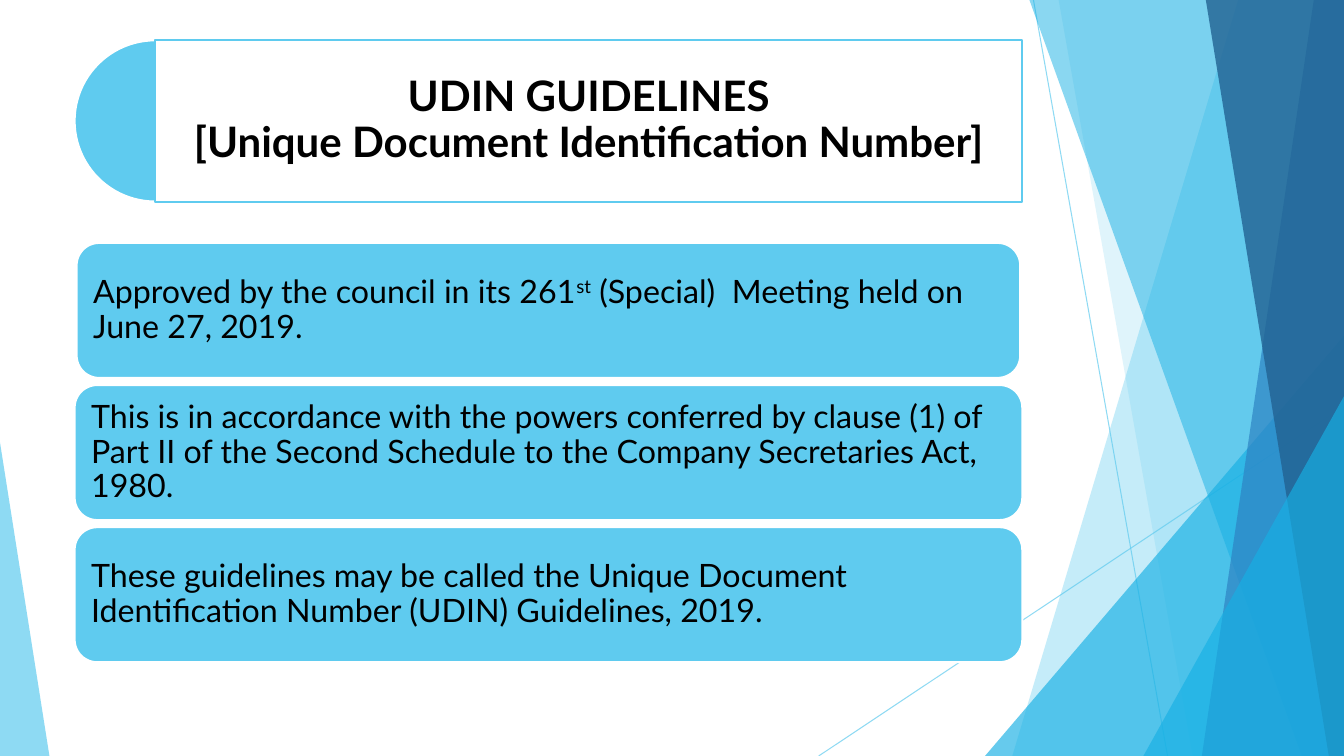
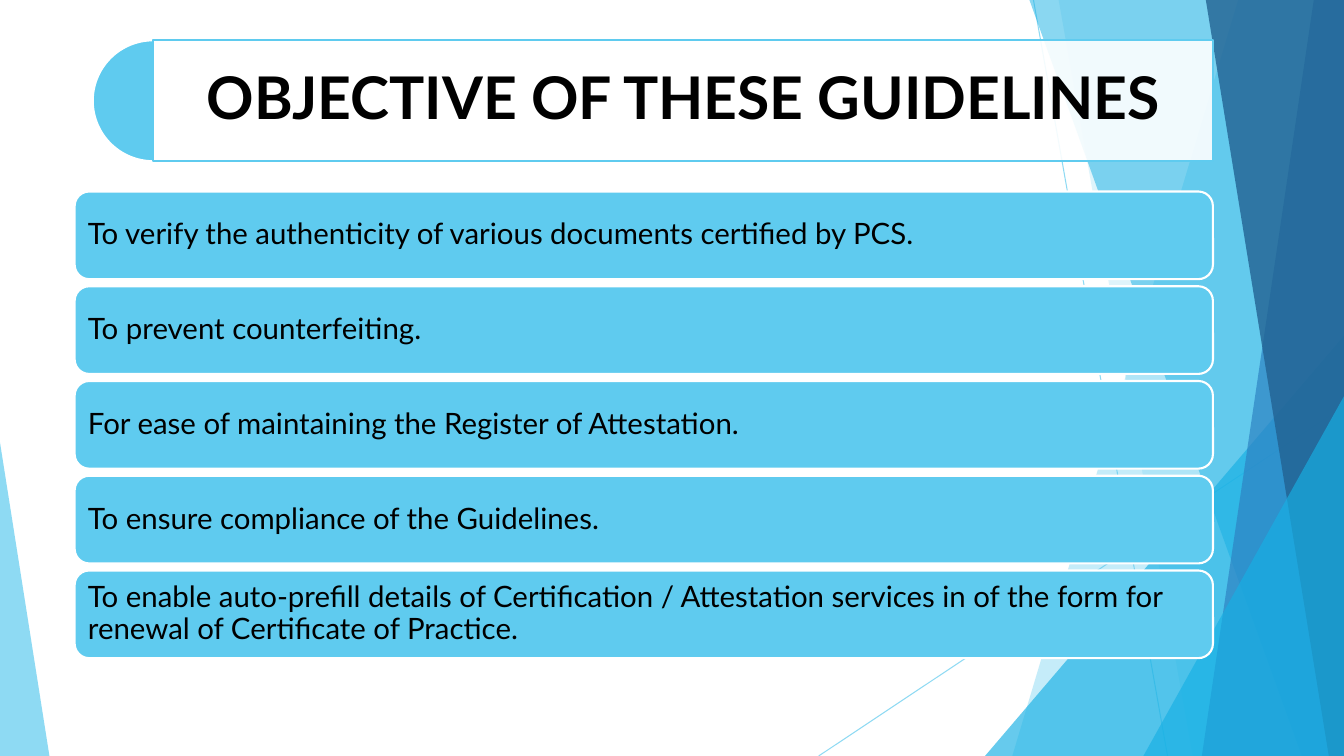
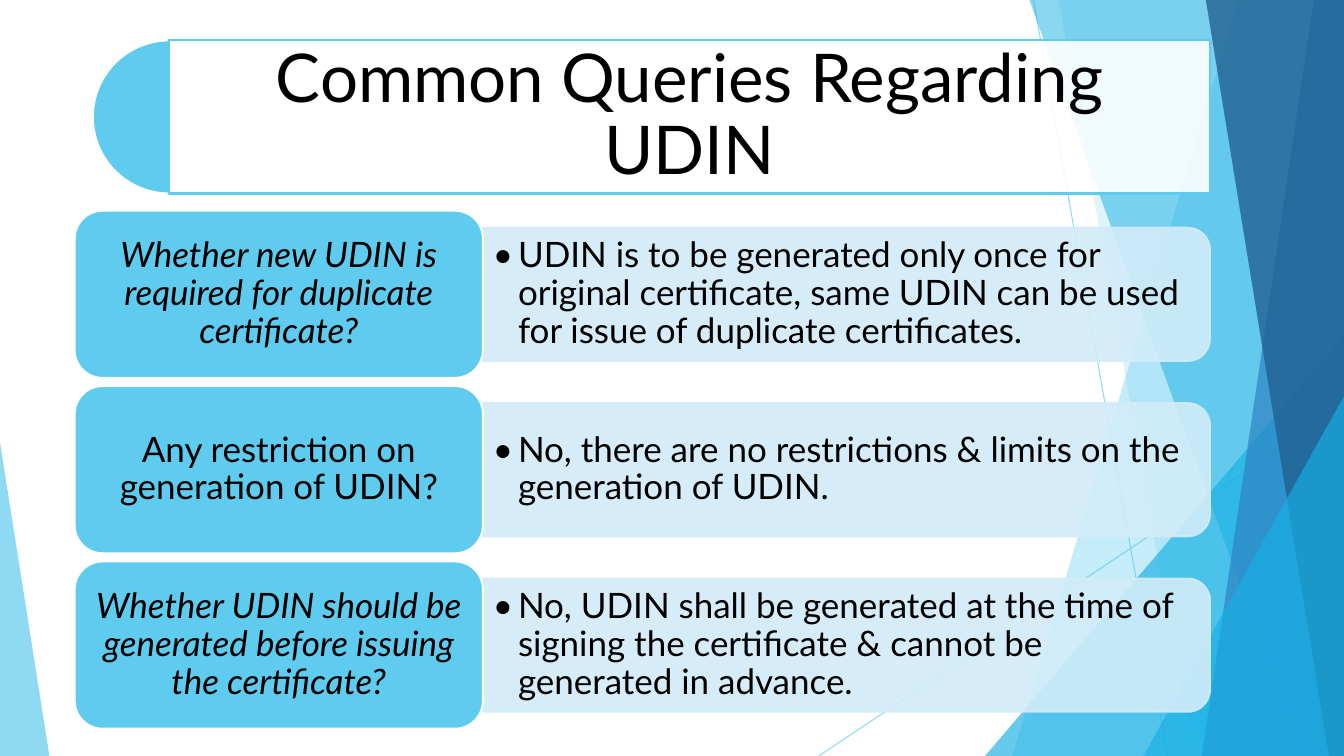
from dataclasses import dataclass
from typing import Optional

from lxml.etree import SubElement
from pptx import Presentation
from pptx.dml.color import RGBColor
from pptx.enum.shapes import MSO_CONNECTOR, MSO_SHAPE
from pptx.enum.text import MSO_ANCHOR, MSO_AUTO_SIZE, PP_ALIGN
from pptx.oxml.ns import qn
from pptx.util import Inches, Pt

WIDTH, HEIGHT = 13.33, 7.5
FONT = "Lato"
COLORS = {
    "sky": "5FCBEF",
    "cyan": "17B0E4",
    "blue": "2E83C3",
    "navy": "226292",
    "pale": "D2ECF9",
    "white": "FFFFFF",
    "black": "000000",
}


@dataclass
class Box:
    left: float
    top: float
    width: float
    height: float

    def emu(self) -> list:
        return [Inches(v) for v in (self.left, self.top, self.width, self.height)]


@dataclass
class Ray:
    start: tuple
    end: tuple


@dataclass
class Band:
    top_x: float
    bottom_x: float
    color: str
    alpha: int


@dataclass
class Wedge:
    box: Box
    apex: int
    color: str
    alpha: int


@dataclass
class Style:
    size: float
    margins: tuple
    align: PP_ALIGN = PP_ALIGN.LEFT
    bold: bool = False
    italic: bool = False


@dataclass
class Run:
    text: str
    baseline: Optional[int] = None


@dataclass
class Header:
    lines: tuple
    box: Box
    style: Style


@dataclass
class Query:
    question: str
    answer: str
    italic: bool


RAYS = [Ray((10.25, 0), (11.58, HEIGHT)), Ray((WIDTH, 4.03), (8.12, HEIGHT))]
BACKDROP = [
    Band(12.28, 10.04, "sky", 36),
    Band(10.5, 11.83, "sky", 20),
    Wedge(Box(9.77, 3.33, 3.56, 4.17), 1, "cyan", 66),
    Band(10.21, 12.91, "cyan", 50),
    Band(13.03, 11.92, "blue", 70),
    Band(11.96, 13.18, "navy", 80),
    Wedge(Box(11.34, 3.93, 1.99, 3.57), 1, "cyan", 66),
    Wedge(Box(0, 4.39, 0.49, 3.11), 0, "sky", 70),
]


def rgb(name: str) -> RGBColor:
    return RGBColor.from_string(COLORS[name])


def set_alpha(sp, percent: int) -> None:
    for clr in sp.element.spPr.iter(qn("a:srgbClr")):
        SubElement(clr, qn("a:alpha")).set("val", str(percent * 1000))


def set_fill(sp, color: str) -> None:
    sp.fill.solid()
    sp.fill.fore_color.rgb = rgb(color)


def set_line(sp, color: str, width: float = 1.5) -> None:
    sp.line.color.rgb = rgb(color)
    sp.line.width = Pt(width)


def add_preset(s, kind: MSO_SHAPE, box: Box, color: str, line: Optional[str] = None):
    sp = s.shapes.add_shape(kind, *box.emu())
    sp.shadow.inherit = False
    set_fill(sp, color)
    if line:
        set_line(sp, line)
    else:
        sp.line.fill.background()
    return sp


def write(sp, lines: tuple, style: Style):
    tf = sp.text_frame
    side, edge = (Inches(m) for m in style.margins)
    frame = {
        "word_wrap": True,
        "auto_size": MSO_AUTO_SIZE.NONE,
        "vertical_anchor": MSO_ANCHOR.MIDDLE,
        "margin_left": side,
        "margin_right": side,
        "margin_top": edge,
        "margin_bottom": edge,
    }
    for name, value in frame.items():
        setattr(tf, name, value)
    p = tf.paragraphs[0]
    p.alignment = style.align
    p.line_spacing = 0.9
    font = {
        "name": FONT,
        "size": Pt(style.size),
        "bold": style.bold,
        "italic": style.italic,
    }
    for i, runs in enumerate(lines):
        if i:
            p.add_line_break()
        for run in runs:
            r = p.add_run()
            r.text = run.text
            for name, value in font.items():
                setattr(r.font, name, value)
            r.font.color.rgb = rgb("black")
            if run.baseline:
                r._r.get_or_add_rPr().set("baseline", str(run.baseline * 1000))
    return p


def add_ray(s, ray: Ray) -> None:
    ends = [Inches(v) for v in ray.start + ray.end]
    line = s.shapes.add_connector(MSO_CONNECTOR.STRAIGHT, *ends)
    set_line(line, "sky", 0.75)
    set_alpha(line, 70)
    SubElement(line.element.spPr, qn("a:effectLst"))


def add_band(s, band: Band) -> None:
    corners = [(WIDTH, 0), (WIDTH, HEIGHT), (band.bottom_x, HEIGHT)]
    builder = s.shapes.build_freeform(Inches(band.top_x), 0)
    builder.add_line_segments([(Inches(x), Inches(y)) for x, y in corners])
    sp = builder.convert_to_shape()
    sp.shadow.inherit = False
    sp.line.fill.background()
    set_fill(sp, band.color)
    set_alpha(sp, band.alpha)


def add_wedge(s, wedge: Wedge) -> None:
    sp = add_preset(s, MSO_SHAPE.ISOSCELES_TRIANGLE, wedge.box, wedge.color)
    sp.adjustments[0] = wedge.apex
    set_alpha(sp, wedge.alpha)


def build_layout(prs, layout) -> None:
    for ph in list(layout.placeholders):
        if ph.placeholder_format.idx:
            layout.shapes.element.remove(ph.element)
    s = prs.slides[0]
    for ray in RAYS:
        add_ray(s, ray)
    for part in BACKDROP:
        if isinstance(part, Band):
            add_band(s, part)
        else:
            add_wedge(s, part)
    for sp in list(s.shapes):
        if not sp.is_placeholder:
            layout.shapes.element.append(sp.element)


def add_header(s, header: Header) -> None:
    box = header.box
    pie_box = Box(box.left - box.height / 2, box.top, box.height, box.height)
    pie = add_preset(s, MSO_SHAPE.PIE, pie_box, "sky", "white")
    pie.adjustments[0], pie.adjustments[1] = 54, 162
    title = s.shapes.title
    s.shapes.element.append(title.element)
    title.left, title.top, title.width, title.height = box.emu()
    set_fill(title, "white")
    set_alpha(title, 90)
    set_line(title, "sky")
    write(title, [[Run(line)] for line in header.lines], header.style)


def add_card(s, box: Box, runs: list, style: Style) -> None:
    sp = add_preset(s, MSO_SHAPE.ROUNDED_RECTANGLE, box, "sky", "white")
    write(sp, [runs], style)


def add_answer(s, text: str, left: float, middle: float) -> None:
    length, depth = 7.21, 1.32
    box = Box(left + (length - depth) / 2, middle - length / 2, depth, length)
    panel = add_preset(s, MSO_SHAPE.ROUND_2_SAME_RECTANGLE, box, "pale", "pale")
    panel.rotation = 90
    set_alpha(panel, 90)
    tb = s.shapes.add_textbox(*Box(left, middle - 0.6, 7.14, 1.2).emu())
    p = write(tb, [[Run(text)]], Style(25, (0.1, 0.05)))
    pPr = p._p.get_or_add_pPr()
    pPr.set("marL", str(Inches(0.25)))
    pPr.set("indent", str(-Inches(0.25)))
    SubElement(pPr, qn("a:buFont")).set("typeface", FONT)
    SubElement(pPr, qn("a:buChar")).set("char", "•")


def fill_guidelines(s) -> None:
    add_header(s, Header(
        ("UDIN GUIDELINES", "[Unique Document Identification Number]"),
        Box(1.54, 0.4, 8.6, 1.6),
        Style(30, (0.12, 0.12), PP_ALIGN.CENTER, bold=True),
    ))
    cards = [
        (0.02, [
            Run("Approved by the council in its 261"),
            Run("st", 30),
            Run(" (Special)  Meeting held on June 27, 2019."),
        ]),
        (0, [Run("This is in accordance with the powers conferred by clause (1) of "
                 "Part II of the Second Schedule to the Company Secretaries Act, 1980.")]),
        (0, [Run("These guidelines may be called the Unique Document "
                 "Identification Number (UDIN) Guidelines, 2019.")]),
    ]
    for i, (inset, runs) in enumerate(cards):
        box = Box(0.74 + inset, 2.41 + 1.41 * i, 9.4 - 2 * inset, 1.34)
        add_card(s, box, runs, Style(23, (0.1, 0.1)))


def fill_objectives(s) -> None:
    add_header(s, Header(
        ("OBJECTIVE OF THESE GUIDELINES",),
        Box(1.52, 0.4, 10.51, 1.2),
        Style(42, (0.19, 0.19), PP_ALIGN.CENTER, bold=True),
    ))
    objectives = [
        "To verify the authenticity of various documents certified by PCS.",
        "To prevent counterfeiting.",
        "For ease of maintaining the Register of Attestation.",
        "To ensure compliance of the Guidelines.",
        "To enable auto-prefill details of Certification / Attestation services "
        "in of the form for renewal of Certificate of Practice.",
    ]
    for i, text in enumerate(objectives):
        box = Box(0.74, 1.9 + 0.94 * i, 11.29, 0.87)
        add_card(s, box, [Run(text)], Style(21, (0.09, 0.09)))


def fill_queries(s) -> None:
    add_header(s, Header(
        ("Common Queries Regarding UDIN",),
        Box(1.68, 0.4, 10.32, 1.52),
        Style(48, (0.2, 0.2), PP_ALIGN.CENTER),
    ))
    queries = [
        Query("Whether new UDIN is required for duplicate certificate?",
              "UDIN is to be generated only once for original certificate, same UDIN "
              "can be used for issue of duplicate certificates.", True),
        Query("Any restriction on generation of UDIN?",
              "No, there are no restrictions & limits on the generation of UDIN.", False),
        Query("Whether UDIN should be generated before issuing the certificate?",
              "No, UDIN shall be generated at the time of signing the certificate & "
              "cannot be generated in advance.", True),
    ]
    for i, query in enumerate(queries):
        box = Box(0.74, 2.09 + 1.74 * i, 4.05, 1.66)
        add_answer(s, query.answer, box.left + box.width, box.top + box.height / 2)
        style = Style(25, (0.1, 0.05), PP_ALIGN.CENTER, italic=query.italic)
        add_card(s, box, [Run(query.question)], style)


def main() -> None:
    prs = Presentation()
    prs.slide_width, prs.slide_height = Inches(WIDTH), Inches(HEIGHT)
    layout = prs.slide_layouts[5]
    fillers = [fill_guidelines, fill_objectives, fill_queries]
    slides = [prs.slides.add_slide(layout) for _ in fillers]
    build_layout(prs, layout)
    for s, fill in zip(slides, fillers):
        fill(s)
    prs.save("out.pptx")


if __name__ == "__main__":
    main()
